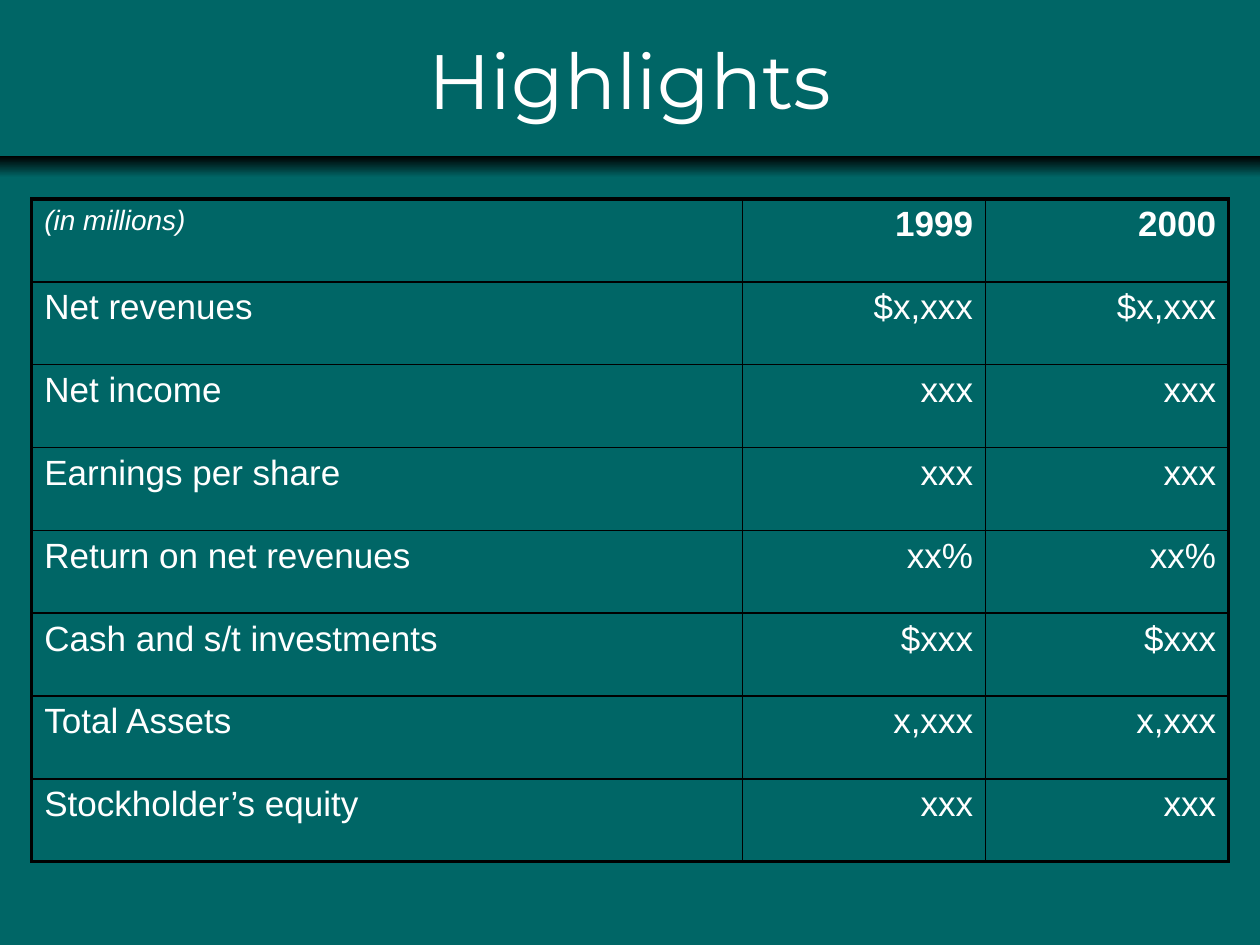
"""Build the financial highlights slide."""
import pptx
import pptx.dml.color
import pptx.enum.shapes
import pptx.enum.text
import pptx.oxml
import pptx.oxml.ns
import pptx.util

Cm = pptx.util.Cm
Pt = pptx.util.Pt
ALIGN = pptx.enum.text.PP_ALIGN

TITLE = "Highlights"
HEADINGS = ("(in millions)", "1999", "2000")
FIGURES = [
    ("Net revenues", "$x,xxx", "$x,xxx"),
    ("Net income", "xxx", "xxx"),
    ("Earnings per share", "xxx", "xxx"),
    ("Return on net revenues", "xx%", "xx%"),
    ("Cash and s/t investments", "$xxx", "$xxx"),
    ("Total Assets", "x,xxx", "x,xxx"),
    ("Stockholder’s equity", "xxx", "xxx"),
]
COLORS = {"teal": "006666", "text": "FFFFFF", "line": "000000"}
COLUMN_WIDTHS = (14.33, 4.9, 4.9)
ROW_HEIGHT = 1.67
OUTER, INNER = 2.25, 1


def rgb(name):
    """Return a named colour."""
    return pptx.dml.color.RGBColor.from_string(COLORS[name])


def write(frame, text, size=20, font="Arial", align=ALIGN.LEFT, bold=False, italic=False):
    """Put one formatted paragraph into a text frame."""
    paragraph = frame.paragraphs[0]
    paragraph.alignment = align
    run = paragraph.add_run()
    run.text = text
    run.font.name = font
    run.font.size = Pt(size)
    run.font.bold = bold
    run.font.italic = italic
    run.font.color.rgb = rgb("text")


def add_borders(cell, widths):
    """Draw the four borders of a cell from widths in points."""
    properties = cell._tc.get_or_add_tcPr()
    for side, width in widths.items():
        properties.append(pptx.oxml.parse_xml(
            f'<a:ln{side} {pptx.oxml.ns.nsdecls("a")} w="{Pt(width)}"><a:solidFill>'
            f'<a:srgbClr val="{COLORS["line"]}"/></a:solidFill></a:ln{side}>'))


def add_title(slide):
    """Fill the title placeholder."""
    title = slide.shapes.title
    title.left, title.top, title.width, title.height = Cm(1.9), Cm(0), Cm(21.6), Cm(3.18)
    title.text_frame.vertical_anchor = pptx.enum.text.MSO_ANCHOR.MIDDLE
    write(title.text_frame, TITLE, size=44, font="Montserrat", align=ALIGN.CENTER)


def add_band(slide, width):
    """Add the fading band below the title."""
    band = slide.shapes.add_shape(
        pptx.enum.shapes.MSO_SHAPE.RECTANGLE, Cm(0), Cm(3.15), width, Cm(0.43))
    band.shadow.inherit = False
    band.line.fill.background()
    band.fill.gradient()
    band.fill.gradient_angle = 270
    for stop, color in zip(band.fill.gradient_stops, ("line", "teal")):
        stop.color.rgb = rgb(color)


def add_figures(slide):
    """Add the table of figures."""
    rows = [HEADINGS] + FIGURES
    last_row, last_column = len(rows) - 1, len(HEADINGS) - 1
    table = slide.shapes.add_table(
        len(rows), len(HEADINGS), Cm(0.64), Cm(4.01),
        Cm(sum(COLUMN_WIDTHS)), Cm(ROW_HEIGHT * len(rows))).table
    table.first_row = table.horz_banding = False
    for column, width in zip(table.columns, COLUMN_WIDTHS):
        column.width = Cm(width)
    for r, values in enumerate(rows):
        table.rows[r].height = Cm(ROW_HEIGHT)
        for c, value in enumerate(values):
            cell = table.cell(r, c)
            unit = r == 0 and c == 0
            write(cell.text_frame, value, size=16 if unit else 20, italic=unit,
                  bold=r == 0 and c > 0, align=ALIGN.RIGHT if c else ALIGN.LEFT)
            edges = {"L": c == 0, "R": c == last_column, "T": r == 0, "B": r == last_row}
            add_borders(cell, {side: OUTER if edge else INNER for side, edge in edges.items()})
            cell.fill.background()


def main():
    """Build and save the slide."""
    deck = pptx.Presentation()
    deck.slide_width, deck.slide_height = Cm(25.4), Cm(19.05)
    slide = deck.slides.add_slide(deck.slide_layouts[5])
    slide.background.fill.solid()
    slide.background.fill.fore_color.rgb = rgb("teal")
    add_band(slide, deck.slide_width)
    add_title(slide)
    add_figures(slide)
    deck.save("out.pptx")


if __name__ == "__main__":
    main()
